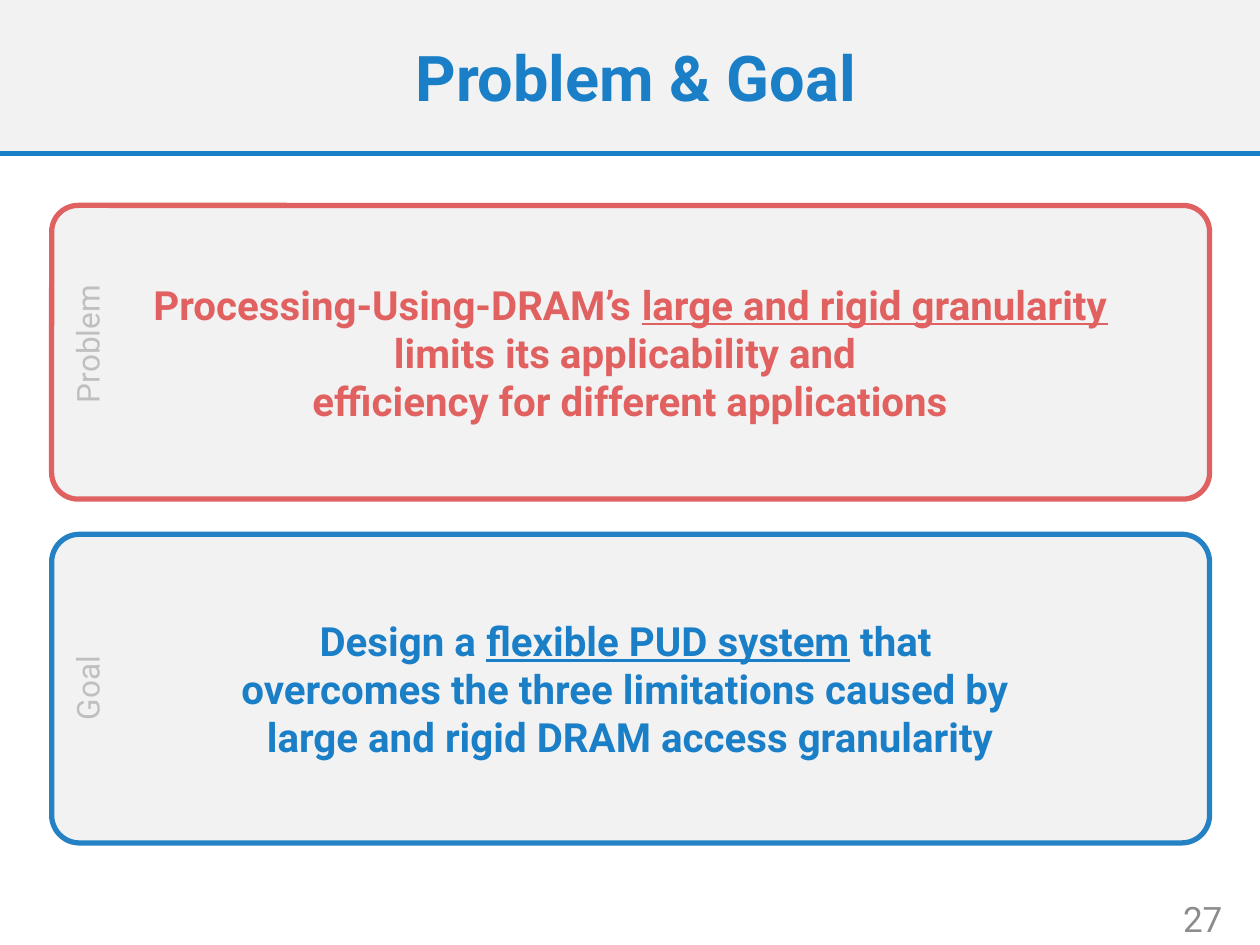
from lxml.etree import SubElement
from pptx import Presentation
from pptx.dml.color import RGBColor
from pptx.enum.shapes import MSO_CONNECTOR, MSO_SHAPE
from pptx.enum.text import MSO_ANCHOR, PP_ALIGN
from pptx.oxml.ns import qn
from pptx.util import Pt

WIDTH, HEIGHT = 720, 540
BLUE, PALE, LABEL_GRAY, NUMBER_GRAY = "1A7FC7", "F2F2F2", "BFBFBF", "8C8C8C"
TITLE, PAGE_NUMBER = "Problem & Goal", "27"
CARD_LEFT, CARD_WIDTH, CORNER = 29.5, 661.7, 0.09
LABEL_CENTER, LABEL_HEIGHT = 49.8, 28.8

# Each line is a list of (text, underlined) spans.
CARDS = [
    {"label": "Problem", "label_middle": 196.6, "top": 117.4, "height": 167.8,
     "border": "E06161", "color": "E16161",
     "lines": [
         [("Processing-Using-DRAM’s ", False), ("large and rigid granularity", True)],
         [("limits its applicability and ", False)],
         [("efficiency for different applications", False)]]},
    {"label": "Goal", "label_middle": 393.1, "top": 305.3, "height": 176.4,
     "border": "2381C4", "color": BLUE,
     "lines": [
         [("Design a ", False), ("flexible PUD system", True), (" that ", False)],
         [("overcomes the three limitations caused by ", False)],
         [("large and rigid DRAM access granularity", False)]]},
]


def rgb(value):
    return RGBColor.from_string(value)


def points(*values):
    return [Pt(value) for value in values]


def write(shape, lines, size, color, bold=False, align=PP_ALIGN.CENTER,
          anchor=MSO_ANCHOR.MIDDLE):
    """Fill the shape with one paragraph of lines; return the paragraph."""
    frame = shape.text_frame
    frame.word_wrap = True
    frame.vertical_anchor = anchor
    para = frame.paragraphs[0]
    para.alignment = align
    for index, line in enumerate(lines):
        if index:
            para.add_line_break()
        for text, underlined in line:
            span = para.add_run()
            span.text = text
            span.font.color.rgb = rgb(color)
            formats = {"name": "Roboto", "size": Pt(size), "bold": bold,
                       "underline": underlined}
            for name, value in formats.items():
                setattr(span.font, name, value)
    return para


def add_panel(page, kind, place, border=None):
    panel = page.shapes.add_shape(kind, *points(*place))
    panel.shadow.inherit = False
    panel.fill.solid()
    panel.fill.fore_color.rgb = rgb(PALE)
    if border:
        panel.line.color.rgb = rgb(border)
        panel.line.width = Pt(3)
    else:
        panel.line.fill.background()
    return panel


def add_header(page):
    add_panel(page, MSO_SHAPE.RECTANGLE, (0, -0.7, WIDTH, 89.3))
    rule = page.shapes.add_connector(MSO_CONNECTOR.STRAIGHT, *points(0, 87.8, WIDTH, 87.8))
    rule.line.color.rgb = rgb(BLUE)
    rule.line.width = Pt(3)
    SubElement(rule._element.spPr, qn("a:effectLst"))
    title = page.shapes.add_textbox(*points(13, 10.1, 700.6, 72.7))
    write(title, [[(TITLE, False)]], 36, BLUE, bold=True).line_spacing = 0.9


def add_card(page, card):
    height = card["height"]
    panel = add_panel(page, MSO_SHAPE.ROUNDED_RECTANGLE,
                      (CARD_LEFT, card["top"], CARD_WIDTH, height), card["border"])
    panel.adjustments[0] = CORNER
    write(panel, card["lines"], 23, card["color"], bold=True)

    label = page.shapes.add_textbox(*points(
        LABEL_CENTER - height / 2, card["label_middle"] - LABEL_HEIGHT / 2,
        height, LABEL_HEIGHT))
    label.rotation = 270
    write(label, [[(card["label"], False)]], 18, LABEL_GRAY, anchor=MSO_ANCHOR.TOP)


def main():
    deck = Presentation()
    deck.slide_width, deck.slide_height = points(WIDTH, HEIGHT)
    page = deck.slides.add_slide(deck.slide_layouts[6])
    add_header(page)
    for card in CARDS:
        add_card(page, card)
    number = page.shapes.add_textbox(*points(627.8, 510.5, 77.8, 28.8))
    write(number, [[(PAGE_NUMBER, False)]], 20, NUMBER_GRAY, align=PP_ALIGN.RIGHT)
    deck.save("out.pptx")


if __name__ == "__main__":
    main()
